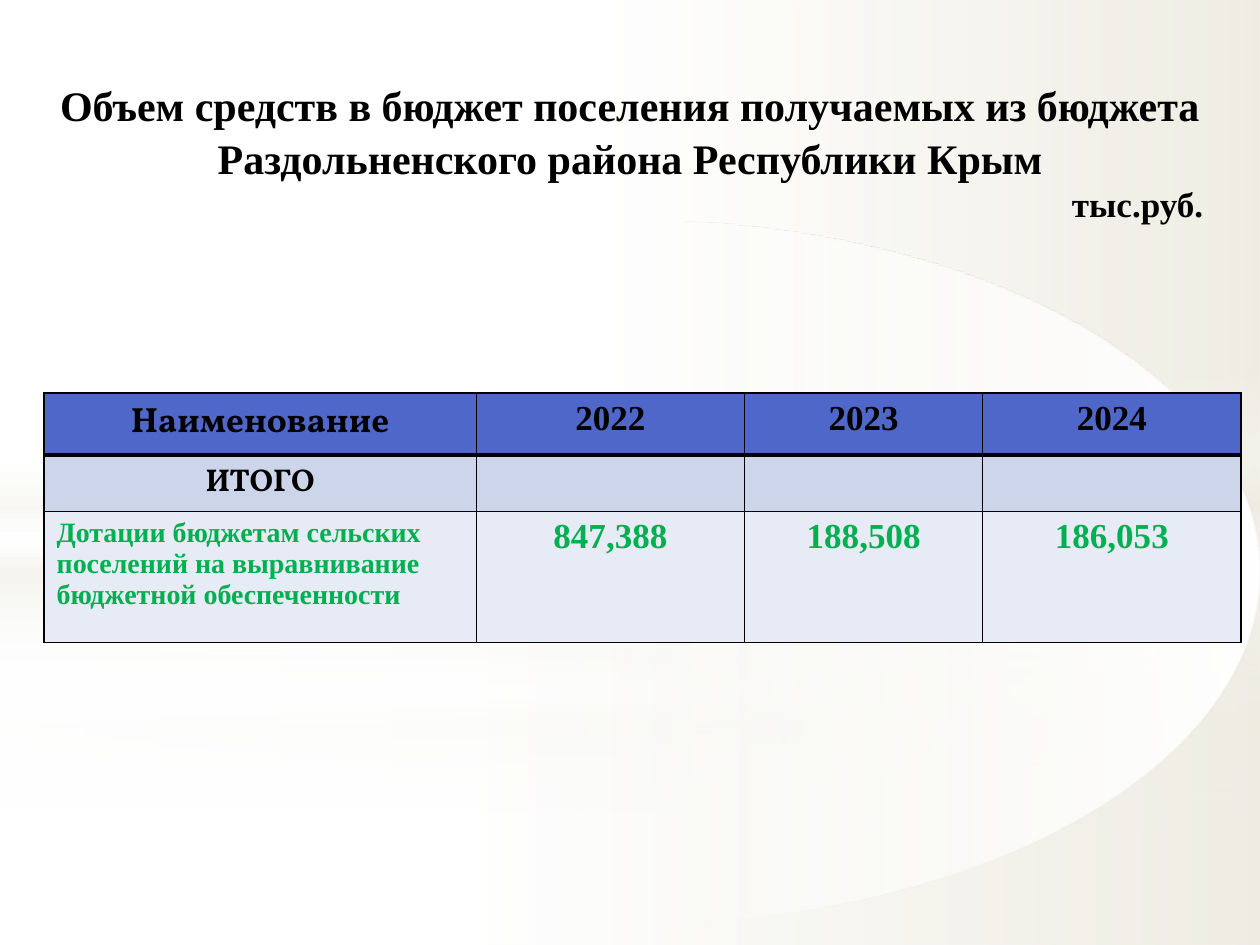
from pptx import Presentation
from pptx.dml.color import RGBColor
from pptx.enum import shapes, text
from pptx.oxml.ns import qn
from pptx.oxml.xmlchemy import OxmlElement
from pptx.util import Inches, Pt

WHITE = RGBColor(0xFF, 0xFF, 0xFF)
BEIGE = RGBColor(0xEE, 0xEC, 0xE1)
BLACK = RGBColor(0, 0, 0)
GREEN = RGBColor(0x00, 0xB0, 0x50)
ROW_FILLS = [RGBColor(0x4E, 0x67, 0xC8), RGBColor(0xCC, 0xD5, 0xEA), RGBColor(0xE7, 0xEB, 0xF5)]

SERIF, DISPLAY = "Times New Roman", "Vollkorn"
THIN, THICK = Pt(0.96), Pt(3)
SLIDE_WIDTH, SLIDE_HEIGHT = 10, 7.5

ROWS = [
    ["Наименование", "2022", "2023", "2024"],
    ["ИТОГО", "", "", ""],
    ["Дотации бюджетам сельских поселений на выравнивание бюджетной обеспеченности",
     "847,388", "188,508", "186,053"],
]
LABEL_FONTS = [(DISPLAY, 20), (DISPLAY, 18), (SERIF, 16)]
COLUMN_WIDTHS = [3.43, 2.13, 1.89, 2.05]
ROW_HEIGHTS = [0.49, 0.37, 1.04]

# Gradient stops: position %, colour, opacity %
BAND_STOPS = [(0, WHITE, 0), (29, WHITE, 30), (45, BEIGE, 40),
              (55, WHITE, 26), (65, BEIGE, 60), (100, WHITE, 0)]


def add_xml(parent, tag, **attributes):
    element = OxmlElement(tag)
    for name, value in attributes.items():
        element.set(name, str(value))
    parent.append(element)
    return element


def add_gradient(slide, kind, box, stops, angle):
    """Add a borderless shape; angle is clockwise in degrees."""
    shape = slide.shapes.add_shape(kind, *(Inches(length) for length in box))
    shape.shadow.inherit = False
    shape.line.fill.background()
    shape.fill.gradient()
    shape.fill.gradient_angle = (360 - angle) % 360
    stop_list = shape._element.spPr.find(qn("a:gradFill")).find(qn("a:gsLst"))
    for stop in list(stop_list):
        stop_list.remove(stop)
    for position, color, opacity in stops:
        stop = add_xml(stop_list, "a:gs", pos=position * 1000)
        fill = add_xml(stop, "a:srgbClr", val=color)
        add_xml(fill, "a:alpha", val=opacity * 1000)


def add_backdrop(slide, split, band_top, extra, glow_end):
    """Two sideways washes meeting at split, a soft band and a glowing ellipse."""
    rectangle = shapes.MSO_SHAPE.RECTANGLE
    lower = [(0, WHITE, 91 + extra), (37, WHITE, 76 + extra), (100, BEIGE, 79 + extra)]
    upper = [(0, WHITE, 89 + extra), (48, WHITE, 62 + extra), (100, BEIGE, 79 + extra)]
    glow = [(0, WHITE, 100), (glow_end, WHITE, 0)]
    add_gradient(slide, rectangle, (0, split, SLIDE_WIDTH, SLIDE_HEIGHT - split), lower, 0)
    add_gradient(slide, rectangle, (0, 0, SLIDE_WIDTH, split), upper, 0)
    add_gradient(slide, rectangle, (0, band_top, SLIDE_WIDTH, 2.5), BAND_STOPS, 90)
    add_gradient(slide, shapes.MSO_SHAPE.OVAL, (0, 1.75, SLIDE_WIDTH, 5.58), glow, 180)


def style_paragraph(paragraph, font, size, color, alignment):
    paragraph.alignment = alignment
    paragraph.font.name = font
    paragraph.font.size = Pt(size)
    paragraph.font.bold = True
    paragraph.font.color.rgb = color


def place_title(slide, left, top, width, height):
    title = slide.shapes.title
    title.left, title.top = Inches(left), Inches(top)
    title.width, title.height = Inches(width), Inches(height)
    frame = title.text_frame
    frame.word_wrap = True
    frame.auto_size = text.MSO_AUTO_SIZE.NONE
    frame.vertical_anchor = text.MSO_ANCHOR.MIDDLE
    frame.margin_left = frame.margin_right = Inches(0.45)
    frame.text = ("Объем средств в бюджет поселения получаемых из бюджета "
                  "Раздольненского района Республики Крым\nтыс.руб.")
    heading, unit = frame.paragraphs
    style_paragraph(heading, SERIF, 24, BLACK, text.PP_ALIGN.CENTER)
    style_paragraph(unit, SERIF, 20, BLACK, text.PP_ALIGN.RIGHT)
    heading.line_spacing = 1.05
    # Bring the title in front of the backdrop
    slide.shapes._spTree.append(title._element)


def set_borders(cell, top, bottom):
    properties = cell._tc.get_or_add_tcPr()
    widths = {"a:lnL": THIN, "a:lnR": THIN, "a:lnT": top, "a:lnB": bottom}
    for index, (tag, width) in enumerate(widths.items()):
        line = add_xml(properties, tag, w=int(width))
        add_xml(add_xml(line, "a:solidFill"), "a:srgbClr", val=BLACK)
        properties.insert(index, line)  # borders come before the fill


def add_budget_table(slide, left, top, width, height):
    frame = slide.shapes.add_table(len(ROWS), len(COLUMN_WIDTHS), Inches(left),
                                   Inches(top), Inches(width), Inches(height))
    table = frame.table
    for column, column_width in zip(table.columns, COLUMN_WIDTHS):
        column.width = Inches(column_width)
    for row_index, values in enumerate(ROWS):
        table.rows[row_index].height = Inches(ROW_HEIGHTS[row_index])
        last = row_index == len(ROWS) - 1
        for column_index, value in enumerate(values):
            cell = table.cell(row_index, column_index)
            cell.text = value
            cell.fill.solid()
            cell.fill.fore_color.rgb = ROW_FILLS[row_index]
            set_borders(cell, THICK if row_index == 1 else THIN,
                        THICK if row_index == 0 else THIN)
            is_label = column_index == 0
            font, size = LABEL_FONTS[row_index] if is_label else (SERIF, 20)
            alignment = text.PP_ALIGN.LEFT if last and is_label else text.PP_ALIGN.CENTER
            style_paragraph(cell.text_frame.paragraphs[0], font, size,
                            GREEN if last else BLACK, alignment)


def main():
    presentation = Presentation()
    presentation.slide_width = Inches(SLIDE_WIDTH)
    presentation.slide_height = Inches(SLIDE_HEIGHT)
    slide = presentation.slides.add_slide(presentation.slide_layouts[5])
    add_backdrop(slide, split=5.58, band_top=4.12, extra=0, glow_end=56)
    add_backdrop(slide, split=4.23, band_top=2.9, extra=1, glow_end=54)
    add_budget_table(slide, 0.35, 3.12, sum(COLUMN_WIDTHS), sum(ROW_HEIGHTS))
    place_title(slide, 0, 0.6, SLIDE_WIDTH, 1.19)
    presentation.save("out.pptx")


if __name__ == "__main__":
    main()
